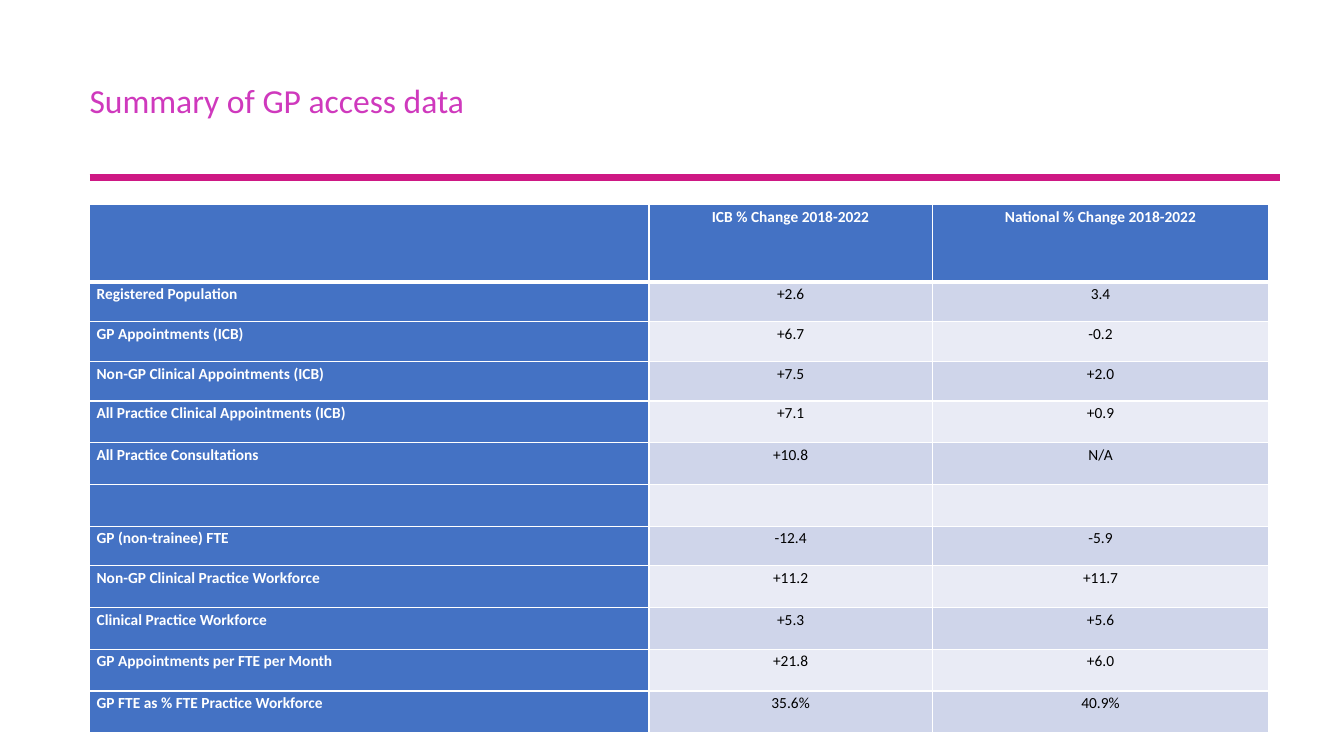
from dataclasses import dataclass

from lxml.etree import SubElement
from pptx import Presentation
from pptx.dml.color import RGBColor
from pptx.enum.shapes import MSO_CONNECTOR
from pptx.enum.text import MSO_AUTO_SIZE, PP_ALIGN
from pptx.oxml.ns import qn
from pptx.util import Pt


@dataclass(frozen=True)
class Theme:
    font: str = "Calibri"
    title_size: int = 24
    table_size: int = 11
    title: str = "CF39BD"
    rule: str = "CE1884"
    header: str = "4472C4"
    band_dark: str = "CFD5EA"
    band_light: str = "E9EBF5"
    white: str = "FFFFFF"
    black: str = "000000"


THEME = Theme()

HEADINGS = ("", "ICB % Change 2018-2022", "National % Change 2018-2022")
MEASURES = (
    ("Registered Population", "+2.6", "3.4"),
    ("GP Appointments (ICB)", "+6.7", "-0.2"),
    ("Non-GP Clinical Appointments (ICB)", "+7.5", "+2.0"),
    ("All Practice Clinical Appointments (ICB)", "+7.1", "+0.9"),
    ("All Practice Consultations", "+10.8", "N/A"),
    ("", "", ""),
    ("GP (non-trainee) FTE", "-12.4", "-5.9"),
    ("Non-GP Clinical Practice Workforce", "+11.2", "+11.7"),
    ("Clinical Practice Workforce", "+5.3", "+5.6"),
    ("GP Appointments per FTE per Month", "+21.8", "+6.0"),
    ("GP FTE as % FTE Practice Workforce", "35.6%", "40.9%"),
)
COLUMN_WIDTHS = (399.6, 202.3, 240.5)
HEADER_HEIGHT, SHORT_ROW, TALL_ROW = 55.4, 28.3, 29.8
SHORT_ROWS = (1, 2, 3, 7)


def write_text(frame, text, *, size, color, bold=False,
               align=PP_ALIGN.LEFT, spacing=None, after=None):
    paragraph = frame.paragraphs[0]
    paragraph.alignment = align
    paragraph.line_spacing = spacing
    paragraph.space_after = after
    run = paragraph.add_run()
    run.text = text
    run.font.name = THEME.font
    run.font.size = Pt(size)
    run.font.bold = bold
    run.font.color.rgb = RGBColor.from_string(color)


def add_title(slide, text):
    title = slide.shapes.add_textbox(Pt(56.9), Pt(53.3), Pt(422.6), Pt(36))
    title.text_frame.word_wrap = True
    title.text_frame.auto_size = MSO_AUTO_SIZE.SHAPE_TO_FIT_TEXT
    write_text(title.text_frame, text, size=THEME.title_size, color=THEME.title)


def add_rule(slide, left, right, y):
    rule = slide.shapes.add_connector(
        MSO_CONNECTOR.STRAIGHT, Pt(left), Pt(y), Pt(right), Pt(y))
    rule.line.color.rgb = RGBColor.from_string(THEME.rule)
    rule.line.width = Pt(4.5)
    SubElement(rule.element.spPr, qn("a:effectLst"))


def add_borders(cell, **widths):
    properties = cell._tc.get_or_add_tcPr()
    for side in ("L", "R", "T", "B"):
        border = SubElement(properties, qn(f"a:ln{side}"),
                            w=str(Pt(widths.get(side, 1))))
        fill = SubElement(border, qn("a:solidFill"))
        SubElement(fill, qn("a:srgbClr"), val=THEME.white)


def format_cell(cell, text, row, column):
    is_header = row == 0 or column == 0
    # Borders come before the fill in the cell properties
    if row == 0:
        add_borders(cell, B=3)
    elif row == 1:
        add_borders(cell, T=3)
    else:
        add_borders(cell)
    band = THEME.band_dark if row % 2 else THEME.band_light
    cell.fill.solid()
    cell.fill.fore_color.rgb = RGBColor.from_string(
        THEME.header if is_header else band)
    cell.margin_left = cell.margin_right = Pt(5)
    cell.margin_top = cell.margin_bottom = Pt(0)
    if text:
        write_text(cell.text_frame, text, size=THEME.table_size,
                   color=THEME.white if is_header else THEME.black,
                   bold=is_header,
                   align=PP_ALIGN.CENTER if column else PP_ALIGN.LEFT,
                   spacing=1.15, after=Pt(10))


def add_access_table(slide, left, top):
    rows = (HEADINGS, *MEASURES)
    heights = [HEADER_HEIGHT] + [
        SHORT_ROW if row in SHORT_ROWS else TALL_ROW
        for row in range(1, len(rows))]
    table = slide.shapes.add_table(
        len(rows), len(HEADINGS), Pt(left), Pt(top),
        Pt(sum(COLUMN_WIDTHS)), Pt(sum(heights))).table
    table.horz_banding = False
    for column, width in zip(table.columns, COLUMN_WIDTHS):
        column.width = Pt(width)
    for row, (height, texts) in enumerate(zip(heights, rows)):
        table.rows[row].height = Pt(height)
        for column, text in enumerate(texts):
            format_cell(table.cell(row, column), text, row, column)


def main():
    deck = Presentation()
    deck.slide_width, deck.slide_height = Pt(960), Pt(540)
    slide = deck.slides.add_slide(deck.slide_layouts[6])

    # Heading
    add_rule(slide, left=64, right=914.4, y=126.9)
    add_title(slide, "Summary of GP access data")

    # Change by measure
    add_access_table(slide, left=64, top=146.2)

    deck.save("out.pptx")


if __name__ == "__main__":
    main()
